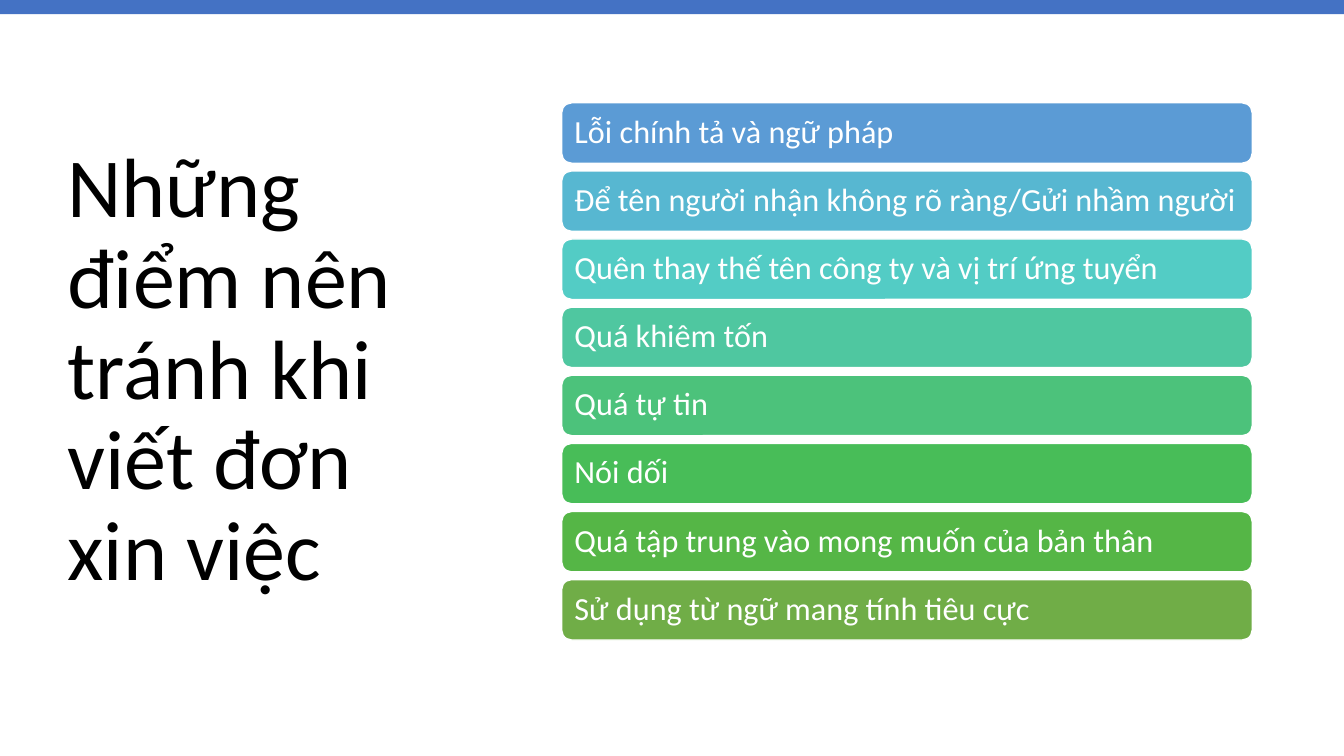
from pptx import Presentation
from pptx.dml.color import RGBColor
from pptx.enum.shapes import MSO_SHAPE
from pptx.enum.text import MSO_ANCHOR, MSO_AUTO_SIZE, PP_ALIGN
from pptx.util import Inches, Pt


def color(code):
    """Turn a hex string into a colour."""
    return RGBColor.from_string(code)


class Deck:
    """Hold the style and the current slide."""

    font = "Calibri"
    dark = "000000"
    light = "FFFFFF"
    accent = "4472C4"

    def __init__(self, show):
        """Add a title-only slide."""
        self.slide = show.slides.add_slide(show.slide_layouts[5])

    def label(self, shape, text, size, code):
        """Put left-aligned, middle-anchored text in a shape."""
        frame = shape.text_frame
        frame.text = text
        frame.word_wrap = True
        frame.auto_size = MSO_AUTO_SIZE.NONE
        frame.vertical_anchor = MSO_ANCHOR.MIDDLE
        line = frame.paragraphs[0]
        line.alignment = PP_ALIGN.LEFT
        line.line_spacing = 0.9
        font = line.runs[0].font
        font.name = self.font
        font.size = Pt(size)
        font.color.rgb = color(code)
        return frame

    def title(self, text, left, top, width, height):
        """Place and style the title."""
        shape = self.slide.shapes.title
        shape.left, shape.top = Inches(left), Inches(top)
        shape.width, shape.height = Inches(width), Inches(height)
        self.label(shape, text, 60, self.dark)

    def block(self, kind, left, top, width, height, fill):
        """Draw a filled shape without a line."""
        shape = self.slide.shapes.add_shape(
            kind, Inches(left), Inches(top), Inches(width), Inches(height))
        shape.shadow.inherit = False
        shape.fill.solid()
        shape.fill.fore_color.rgb = color(fill)
        shape.line.fill.background()
        return shape

    def band(self, width):
        """Draw the band along the top edge."""
        self.block(MSO_SHAPE.RECTANGLE, 0, 0, width, 0.14, self.accent)

    def point(self, text, top, fill):
        """Draw one rounded bar with its text."""
        bar = self.block(
            MSO_SHAPE.ROUNDED_RECTANGLE, 5.57, top, 6.85, 0.6, fill)
        bar.line.color.rgb = color(self.light)
        bar.line.width = Pt(1)
        frame = self.label(bar, text, 23, self.light)
        frame.margin_left = frame.margin_right = Inches(0.1)


POINTS = [
    ("Lỗi chính tả và ngữ pháp", "5B9BD5"),
    ("Để tên người nhận không rõ ràng/Gửi nhầm người", "57B7D1"),
    ("Quên thay thế tên công ty và vị trí ứng tuyển", "53CCC5"),
    ("Quá khiêm tốn", "4FC7A0"),
    ("Quá tự tin", "4CC27B"),
    ("Nói dối", "48BD58"),
    ("Quá tập trung vào mong muốn của bản thân", "55B646"),
    ("Sử dụng từ ngữ mang tính tiêu cực", "70AD47"),
]


def main():
    """Build the slide and save it."""
    show = Presentation()
    show.slide_width, show.slide_height = Inches(13.33), Inches(7.5)
    deck = Deck(show)
    deck.title("Những điểm nên tránh khi viết đơn xin việc",
               0.57, 0.68, 4.16, 6.02)
    deck.band(13.33)
    first, last = 1.02, 5.75
    step = (last - first) / (len(POINTS) - 1)
    for row, (text, fill) in enumerate(POINTS):
        deck.point(text, first + row * step, fill)
    show.save("out.pptx")


if __name__ == "__main__":
    main()
